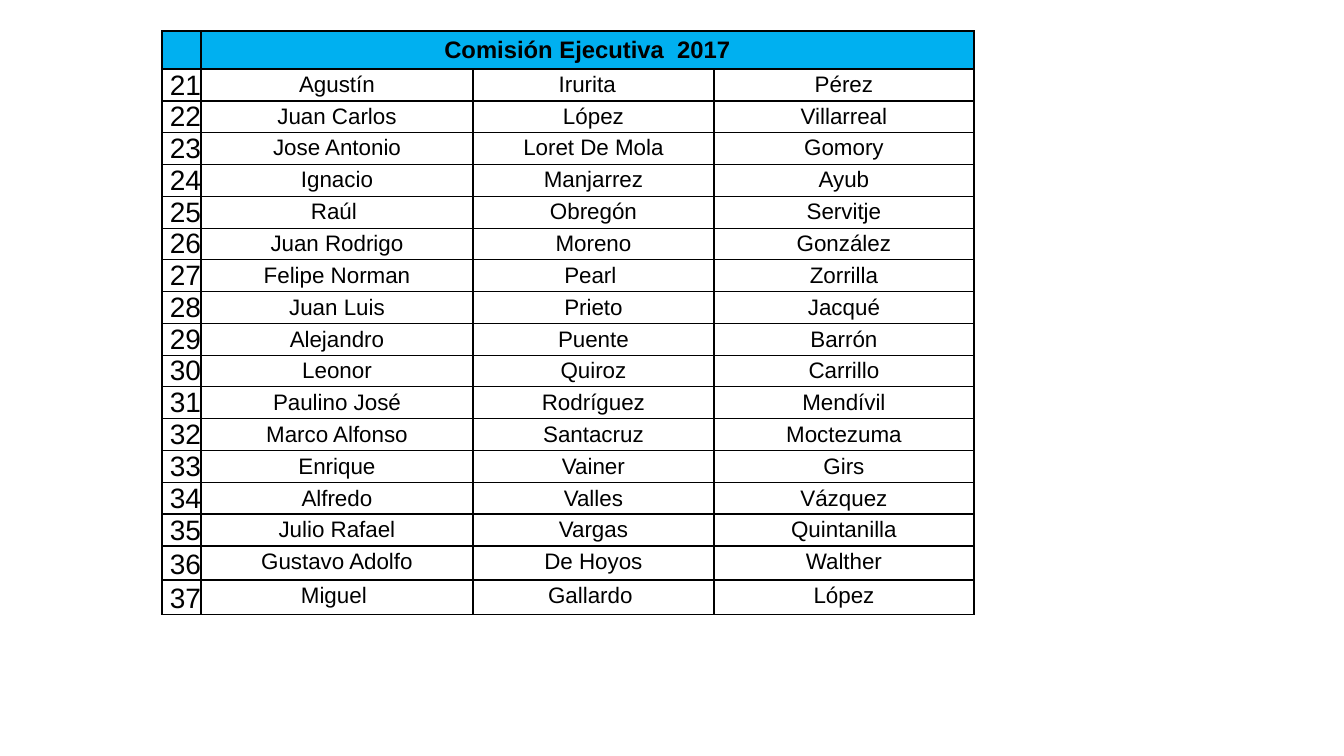
from lxml.etree import SubElement
from pptx import Presentation
from pptx.dml.color import RGBColor
from pptx.enum.text import MSO_ANCHOR, PP_ALIGN
from pptx.oxml.ns import qn
from pptx.util import Pt

PX = 9071
BLACK = RGBColor(0x00, 0x00, 0x00)
WHITE = RGBColor(0xFF, 0xFF, 0xFF)
HEADER_BLUE = RGBColor(0x00, 0xB0, 0xF0)

TITLE = "Comisión Ejecutiva  2017"
FIRST_NUMBER = 21
MEMBERS = [
    ("Agustín", "Irurita  ", "Pérez"),
    ("Juan Carlos", "López", "Villarreal"),
    ("Jose Antonio", "Loret De Mola", "Gomory"),
    ("Ignacio", "Manjarrez", "Ayub"),
    ("Raúl ", "Obregón", "Servitje"),
    ("Juan Rodrigo", "Moreno", "González"),
    ("Felipe Norman", "Pearl ", "Zorrilla"),
    ("Juan Luis", "Prieto", "Jacqué"),
    ("Alejandro", "Puente", "Barrón"),
    ("Leonor", "Quiroz", "Carrillo"),
    ("Paulino José", "Rodríguez", "Mendívil"),
    ("Marco Alfonso", "Santacruz", "Moctezuma"),
    ("Enrique", "Vainer", "Girs"),
    ("Alfredo", "Valles", "Vázquez"),
    ("Julio Rafael", "Vargas", "Quintanilla"),
    ("Gustavo Adolfo", "De Hoyos", "Walther"),
    ("Miguel ", "Gallardo ", "López"),
]
COLUMN_WIDTHS = [39, 272, 241, 260]
HEADER_HEIGHT = 38
TALL_HEIGHTS = [34, 35]
REGULAR_COUNT = len(MEMBERS) - len(TALL_HEIGHTS)


def add_borders(cell):
    properties = cell._tc.get_or_add_tcPr()
    for position, side in enumerate(("a:lnL", "a:lnR", "a:lnT", "a:lnB")):
        border = properties.makeelement(qn(side), {"w": str(Pt(1))})
        properties.insert(position, border)
        fill = SubElement(border, qn("a:solidFill"))
        SubElement(fill, qn("a:srgbClr"), val=str(BLACK))


def fill_cell(cell, text, size, fill, align=PP_ALIGN.CENTER,
              anchor=MSO_ANCHOR.MIDDLE, bold=False, inset=0):
    cell.fill.solid()
    cell.fill.fore_color.rgb = fill
    cell.margin_left = cell.margin_right = cell.margin_bottom = inset * PX
    cell.margin_top = 0
    cell.vertical_anchor = anchor
    cell.text_frame.text = text
    paragraph = cell.text_frame.paragraphs[0]
    paragraph.alignment = align
    for run in paragraph.runs:
        run.font.name = "Arial"
        run.font.size = Pt(size)
        run.font.bold = bold
        run.font.color.rgb = BLACK
    add_borders(cell)


def add_committee_table(slide, left, top, width, height):
    committee = slide.shapes.add_table(
        len(MEMBERS) + 1, len(COLUMN_WIDTHS),
        left * PX, top * PX, width * PX, height * PX).table
    committee.first_row = False
    committee.horz_banding = False
    for column, column_width in zip(committee.columns, COLUMN_WIDTHS):
        column.width = column_width * PX

    regular_space = height - HEADER_HEIGHT - sum(TALL_HEIGHTS)
    edges = [round(regular_space * i / REGULAR_COUNT)
             for i in range(REGULAR_COUNT + 1)]
    regular_heights = [end - start for start, end in zip(edges, edges[1:])]
    row_heights = [HEADER_HEIGHT] + regular_heights + TALL_HEIGHTS
    for row, row_height in zip(committee.rows, row_heights):
        row.height = row_height * PX

    committee.cell(0, 1).merge(committee.cell(0, 3))
    for column, heading in enumerate(("", TITLE, "", "")):
        fill_cell(committee.cell(0, column), heading, 17, HEADER_BLUE, bold=True)

    for index, names in enumerate(MEMBERS):
        row = index + 1
        fill_cell(committee.cell(row, 0), str(FIRST_NUMBER + index), 20, WHITE,
                  PP_ALIGN.RIGHT, MSO_ANCHOR.BOTTOM)
        inset = 3 if index >= REGULAR_COUNT else 0
        for column, name in enumerate(names, 1):
            fill_cell(committee.cell(row, column), name, 16, WHITE, inset=inset)


def main():
    presentation = Presentation()
    presentation.slide_width = 1344 * PX
    presentation.slide_height = 756 * PX
    slide = presentation.slides.add_slide(presentation.slide_layouts[6])
    add_committee_table(slide, 162, 31, 812, 583)
    presentation.save("out.pptx")


if __name__ == "__main__":
    main()
